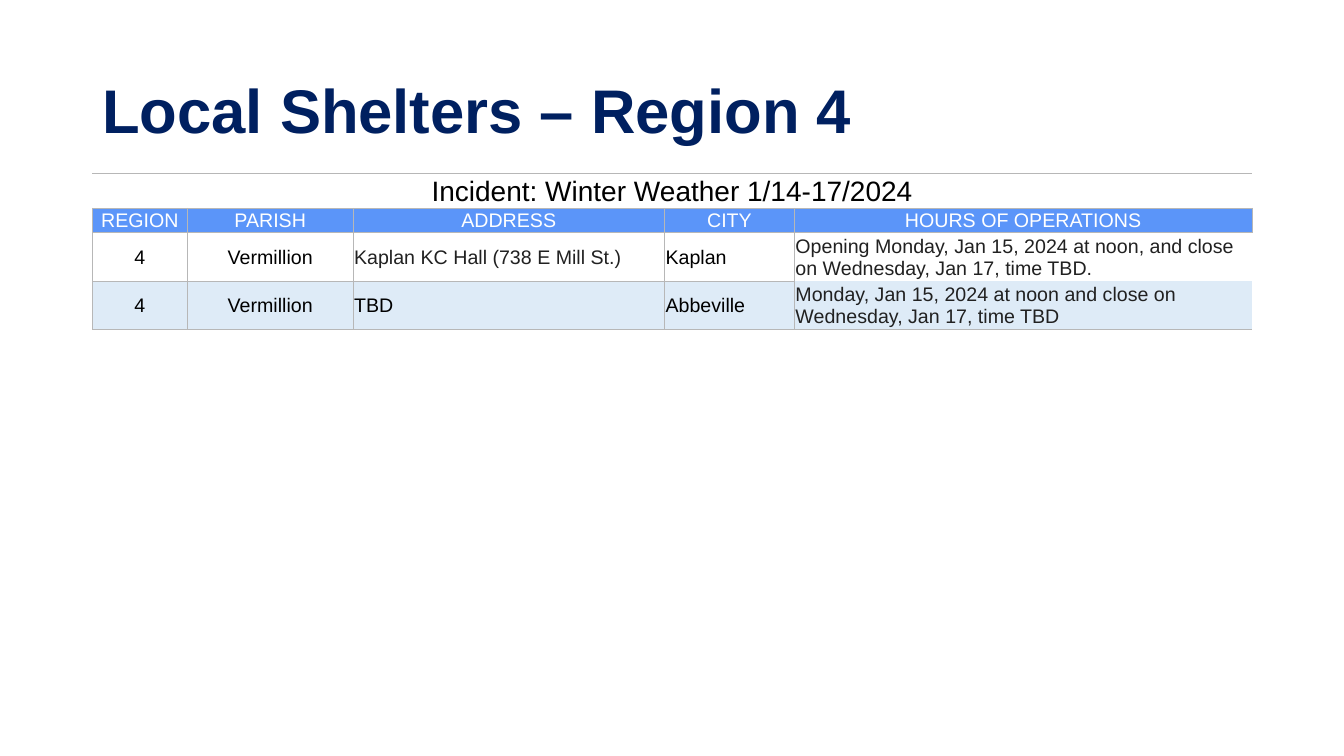
import pptx
import pptx.util
import pptx.dml.color
import pptx.enum.text
import pptx.oxml
import pptx.oxml.ns
from dataclasses import dataclass

Pt = pptx.util.Pt
PP_ALIGN = pptx.enum.text.PP_ALIGN
MIDDLE = pptx.enum.text.MSO_ANCHOR.MIDDLE


@dataclass(frozen=True)
class Theme:
    font: str = "Arial"
    navy: str = "002060"
    black: str = "000000"
    ink: str = "212121"
    white: str = "FFFFFF"
    header: str = "5B95F9"
    band: str = "DEEBF7"
    rule: str = "B7B7B7"
    title_size: int = 44
    incident_size: int = 20
    cell_size: int = 14


T = Theme()

INCIDENT = "Incident: Winter Weather 1/14-17/2024"
HEADERS = ["REGION", "PARISH", "ADDRESS", "CITY", "HOURS OF OPERATIONS"]
SHELTERS = [
    ["4", "Vermillion", "Kaplan KC Hall (738 E Mill St.)", "Kaplan",
     "Opening Monday, Jan 15, 2024 at noon, and close on Wednesday, Jan 17, time TBD."],
    ["4", "Vermillion", "TBD", "Abbeville",
     "Monday, Jan 15, 2024 at noon and close on Wednesday, Jan 17, time TBD"],
]
COL_WIDTHS = [67.9, 118.3, 222.5, 92.8, 326.9]
ROW_HEIGHTS = [22.8, 17.4, 32, 32]


def rgb(color):
    return pptx.dml.color.RGBColor.from_string(color)


def add_run(p, text, size, color, bold=False):
    r = p.add_run()
    r.text = text
    r.font.name, r.font.size, r.font.bold = T.font, Pt(size), bold
    r.font.color.rgb = rgb(color)


def add_title(s, text):
    sp = s.shapes.add_textbox(Pt(66), Pt(28.75), Pt(828), Pt(104.4))
    tf = sp.text_frame
    tf.word_wrap = True
    tf.vertical_anchor = MIDDLE
    p = tf.paragraphs[0]
    p.line_spacing = 0.9
    add_run(p, text, T.title_size, T.navy, bold=True)


def set_borders(cell, sides):
    """Rule the given sides (letters of LRTB) and clear the others."""
    tc_pr = cell._tc.get_or_add_tcPr()
    for i, side in enumerate("LRTB"):
        ln = pptx.oxml.parse_xml(
            f'<a:ln{side} {pptx.oxml.ns.nsdecls("a")} w="{Pt(0.5)}"/>')
        fill = pptx.oxml.ns.qn("a:solidFill" if side in sides else "a:noFill")
        paint = ln.makeelement(fill, {})
        ln.append(paint)
        if side in sides:
            paint.append(paint.makeelement(pptx.oxml.ns.qn("a:srgbClr"), {"val": T.rule}))
        tc_pr.insert(i, ln)


def fill_cell(cell, text, size, color, fill=None, centred=False, sides="LRTB"):
    cell.margin_left = cell.margin_right = cell.margin_top = Pt(0.75)
    cell.margin_bottom = 0
    cell.vertical_anchor = MIDDLE
    if fill:
        cell.fill.solid()
        cell.fill.fore_color.rgb = rgb(fill)
    else:
        cell.fill.background()
    p = cell.text_frame.paragraphs[0]
    p.alignment = PP_ALIGN.CENTER if centred else PP_ALIGN.LEFT
    add_run(p, text, size, color)
    set_borders(cell, sides)


def add_shelter_table(s):
    frame = s.shapes.add_table(len(ROW_HEIGHTS), len(COL_WIDTHS), Pt(66), Pt(123.9),
                               Pt(sum(COL_WIDTHS)), Pt(sum(ROW_HEIGHTS)))
    table = frame.table
    table.first_row = table.horz_banding = False
    for col, width in zip(table.columns, COL_WIDTHS):
        col.width = Pt(width)
    for row, height in zip(table.rows, ROW_HEIGHTS):
        row.height = Pt(height)

    # Incident line across all columns
    last = len(HEADERS) - 1
    table.cell(0, 0).merge(table.cell(0, last))
    fill_cell(table.cell(0, 0), INCIDENT, T.incident_size, T.black, centred=True, sides="TB")
    for c in range(1, last + 1):
        set_borders(table.cell(0, c), "TB")

    # Column headings
    for c, heading in enumerate(HEADERS):
        fill_cell(table.cell(1, c), heading, T.cell_size, T.white, T.header, centred=True)

    # Shelters: the hours column is open on the right and between rows
    bodies = zip(SHELTERS, (T.white, T.band), ("LT", "LB"))
    for n, (shelter, fill, hours_sides) in enumerate(bodies, start=2):
        for c, text in enumerate(shelter):
            dark_grey = c == last or "Hall" in text
            fill_cell(table.cell(n, c), text, T.cell_size, T.ink if dark_grey else T.black,
                      fill, centred=c < 2, sides=hours_sides if c == last else "LRTB")


def main():
    prs = pptx.Presentation()
    prs.slide_width, prs.slide_height = Pt(960), Pt(540)
    s = prs.slides.add_slide(prs.slide_layouts[6])
    add_title(s, "Local Shelters – Region 4")
    add_shelter_table(s)
    prs.save("out.pptx")


if __name__ == "__main__":
    main()
